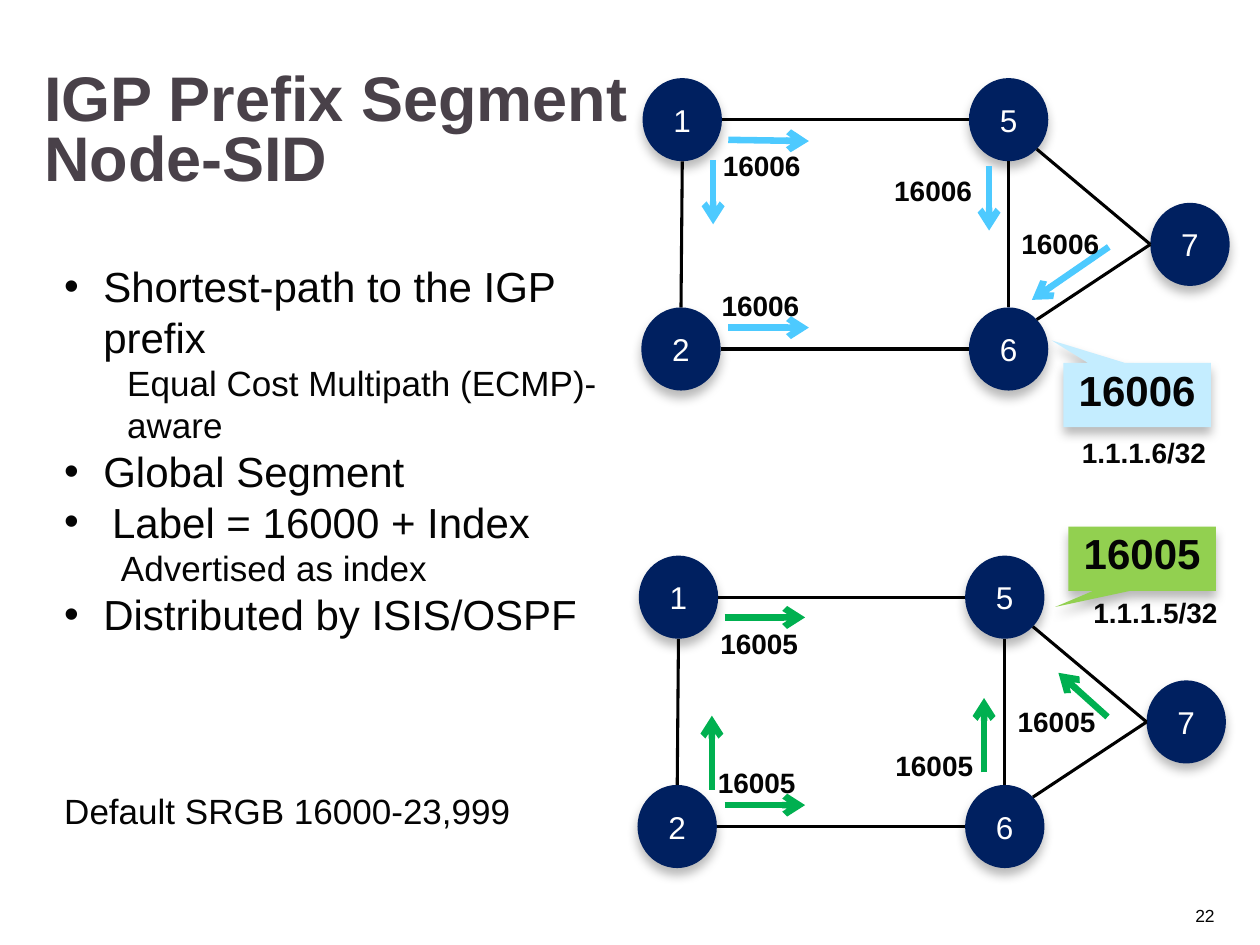
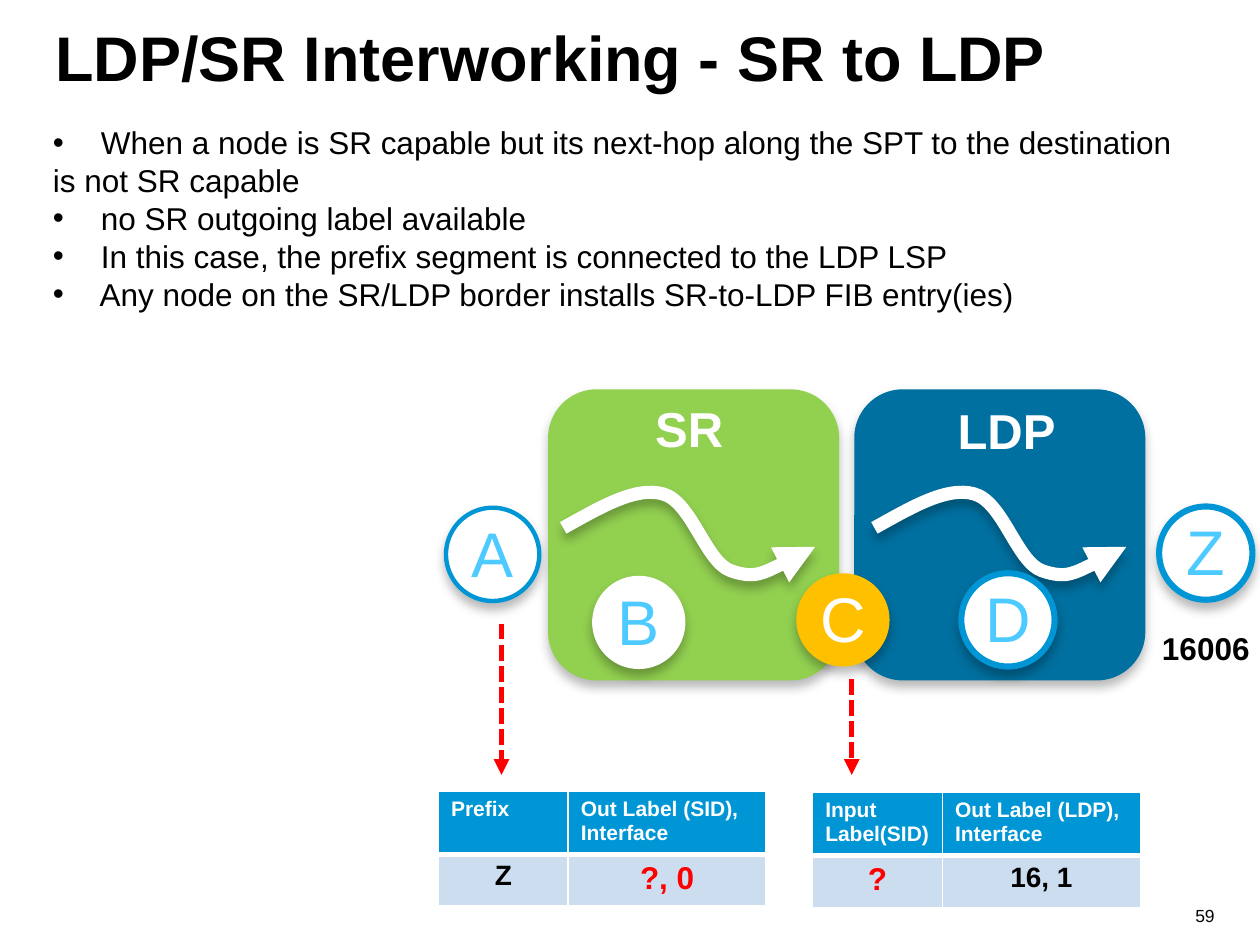
from math import cos, radians, sin

from lxml import etree
from pptx import Presentation
from pptx.dml.color import RGBColor
from pptx.enum.dml import MSO_LINE
from pptx.enum.shapes import MSO_CONNECTOR, MSO_SHAPE
from pptx.enum.text import MSO_ANCHOR, MSO_AUTO_SIZE, PP_ALIGN
from pptx.oxml.ns import qn
from pptx.util import Pt

PX = 9144
FONT = "Arial"
LEFT, CENTER, RIGHT = PP_ALIGN.LEFT, PP_ALIGN.CENTER, PP_ALIGN.RIGHT
TOP, MIDDLE, BOTTOM = MSO_ANCHOR.TOP, MSO_ANCHOR.MIDDLE, MSO_ANCHOR.BOTTOM
OVAL, ROUNDED, CALLOUT = MSO_SHAPE.OVAL, MSO_SHAPE.ROUNDED_RECTANGLE, MSO_SHAPE.RECTANGULAR_CALLOUT
STRAIGHT, DASHED = MSO_CONNECTOR.STRAIGHT, MSO_LINE.SQUARE_DOT

BLACK, INK, WHITE, RED = "000000", "040404", "FFFFFF", "FF0000"
NAVY, SKY, BLUE, OCEAN = "002060", "4DCAFF", "0096D6", "0070A0"
LIME, GREEN, AMBER, PALE_SKY, PALE_BLUE = "92D050", "00B050", "FFC000", "C4EDFF", "CCDDF0"

SEGMENT_SLIDE = {
    "title": ["IGP Prefix Segment", "Node-SID"],
    "title_box": (25, 67, 939, 92), "title_color": "494149", "title_anchor": BOTTOM,
    "body_box": (41, 202, 500, 475), "body_color": INK, "number": "22",
    "body": [
        ("Shortest-path to the IGP prefix", 24, 31, True, 0),
        ("Equal Cost Multipath (ECMP)-", 20, 50, False, 0),
        ("aware", 20, 50, False, 0),
        ("Global Segment", 24, 31, True, 0),
        ("Label = 16000 + Index", 24, 38, True, 0),
        ("Advertised as index", 20, 45, False, 0),
        ("Distributed by ISIS/OSPF", 24, 31, True, 0),
        ("Default SRGB 16000-23,999", 20, 0, False, 86),
    ],
}
INTERWORKING_SLIDE = {
    "title": ["LDP/SR Interworking - SR to LDP"],
    "title_box": (34, 21, 939, 92), "title_color": BLACK, "title_anchor": TOP,
    "body_box": (32, 93, 960, 252), "body_color": BLACK, "number": "59",
    "body": [
        ("When a node is SR capable but its next-hop along the SPT to the destination", 18, 38, True, 0),
        ("is not SR capable", 18, 0, False, 0),
        ("no SR outgoing label available", 18, 38, True, 0),
        ("In this case, the prefix segment is connected to the LDP LSP", 18, 38, True, 0),
        ("Any node on the SR/LDP border installs SR-to-LDP FIB entry(ies)", 18, 37, True, 0),
    ],
}

NODE_SIZE = (63, 66)
NODES = {"1": (1, 0), "2": (0, 182), "5": (260, 0), "6": (260, 182), "7": (404, 99)}
SITE_TOP, SITE_LEFT, SITE_BOTTOM, SITE_LOWER_RIGHT, SITE_RIGHT, SITE_UPPER_RIGHT = 0, 2, 4, 5, 6, 7
LINKS = [
    ("1", SITE_RIGHT, "5", SITE_LEFT), ("2", SITE_RIGHT, "6", SITE_LEFT),
    ("1", SITE_BOTTOM, "2", SITE_TOP), ("5", SITE_BOTTOM, "6", SITE_TOP),
    ("5", SITE_LOWER_RIGHT, "7", SITE_LEFT), ("6", SITE_UPPER_RIGHT, "7", SITE_LEFT),
]
TOPOLOGIES = [
    {
        "origin": (509, 62), "label": "16006", "arrow_color": SKY,
        "arrows": [(69, 49, 133, 50), (57, 65, 57, 116), (69, 198, 133, 198),
                   (276, 70, 276, 121), (371, 134, 310, 176)],
        "labels": [(55, 51), (54, 162), (191, 71), (292, 113)],
        "callout": (335, 226), "callout_color": PALE_SKY, "pointer": (-0.58, -0.85),
        "prefix": "1.1.1.6/32", "prefix_at": (339, 279),
    },
    {
        "origin": (506, 441), "label": "16005", "arrow_color": GREEN,
        "arrows": [(69, 49, 133, 49), (59, 186, 59, 127), (69, 198, 133, 198),
                   (275, 172, 275, 113), (373, 128, 334, 93)],
        "labels": [(56, 51), (54, 162), (195, 148), (292, 113)],
        "callout": (342, -23), "callout_color": LIME, "pointer": (-0.59, 0.75),
        "prefix": "1.1.1.5/32", "prefix_at": (351, 27),
    },
]

DOMAINS = [
    ("LDP", (678, 309), OCEAN, (760, 313, 99, 57), (694, 419)),
    ("SR", (435, 309), LIME, (520, 311, 75, 57), (447, 419)),
]
PATH_POINTS = [(29, -16), (57, -33), (79, -27), (102, -21), (113, 27), (133, 34),
               (153, 41), (177, 28), (200, 15)]
ROUTERS = [
    ("C", (632, 455), AMBER, WHITE, None), ("B", (470, 457), WHITE, SKY, None),
    ("D", (763, 455), WHITE, SKY, 3.5), ("A", (354, 403), WHITE, SKY, 2.5),
    ("Z", (920, 402), WHITE, SKY, 3.5),
]
LOOKUPS = [(398, 495, 398, 615), (676, 539, 676, 615)]
COLUMN_WIDTHS, ROW_HEIGHTS = (103, 157), (50, 41)
TABLES = [
    ((348, 628), ["Prefix", "Out Label (SID), Interface"], [("Z", 16, BLACK), ("?, 0", 18, RED)]),
    ((645, 629), ["Input Label(SID)", "Out Label (LDP), Interface"], [("?", 18, RED), ("16, 1", 16, BLACK)]),
]


def emu(*lengths):
    return [round(length * PX) for length in lengths]


def rgb(value):
    return RGBColor.from_string(value)


def apply(target, values):
    for name, value in values.items():
        setattr(target, name, value)


def write(frame, lines, size, color, bold=False, **paragraph_format):
    frame.text = "\n".join(lines)
    for paragraph in frame.paragraphs:
        apply(paragraph, paragraph_format)
        apply(paragraph.font, {"name": FONT, "size": Pt(size), "bold": bold})
        paragraph.font.color.rgb = rgb(color)


def add_label(slide, box, text, size, color, bold=True, align=CENTER, anchor=TOP):
    frame = slide.shapes.add_textbox(*emu(*box)).text_frame
    apply(frame, {"word_wrap": False, "vertical_anchor": anchor, "margin_left": 0, "margin_right": 0})
    write(frame, [text], size, color, bold, alignment=align)


def drop_shadow(shape):
    shape.shadow.inherit = False
    effects = shape._element.spPr.find(qn("a:effectLst"))
    shadow = etree.SubElement(effects, qn("a:outerShdw"), blurRad=str(Pt(6)), dist=str(Pt(4)),
                              dir="5400000", algn="ctr", rotWithShape="0")
    tint = etree.SubElement(shadow, qn("a:srgbClr"), val=BLACK)
    etree.SubElement(tint, qn("a:alpha"), val="27000")


def add_figure(slide, kind, box, fill, outline=None):
    shape = slide.shapes.add_shape(kind, *emu(*box))
    shape.fill.solid()
    shape.fill.fore_color.rgb = rgb(fill)
    if outline:
        style_line(shape.line, BLUE, outline)
    else:
        shape.line.fill.background()
    drop_shadow(shape)
    margins = ("margin_left", "margin_top", "margin_right", "margin_bottom")
    apply(shape.text_frame, {"word_wrap": False, "vertical_anchor": MIDDLE} | dict.fromkeys(margins, 0))
    return shape


def style_line(line, color, width, head=None, dash=None):
    line.color.rgb = rgb(color)
    line.width = Pt(width)
    if dash:
        line.dash_style = dash
    if head:
        etree.SubElement(line._get_or_add_ln(), qn("a:tailEnd"), type=head)


def add_line(slide, ends, color, width, head=None, dash=None):
    connector = slide.shapes.add_connector(STRAIGHT, *emu(*ends))
    style_line(connector.line, color, width, head, dash)
    etree.SubElement(connector._element.spPr, qn("a:effectLst"))
    return connector


def add_base_slide(presentation, content):
    slide = presentation.slides.add_slide(presentation.slide_layouts[1])
    title, body = slide.shapes.title, slide.placeholders[1]
    for placeholder, box in ((title, content["title_box"]), (body, content["body_box"])):
        apply(placeholder, dict(zip(("left", "top", "width", "height"), emu(*box))))
        apply(placeholder.text_frame, {"auto_size": MSO_AUTO_SIZE.NONE, "word_wrap": True})
    title.text_frame.vertical_anchor = content["title_anchor"]
    write(title.text_frame, content["title"], 36, content["title_color"], True,
          alignment=LEFT, line_spacing=0.8)
    write(body.text_frame, [item[0] for item in content["body"]], 18, content["body_color"])
    for paragraph, (_, size, margin, bulleted, gap) in zip(body.text_frame.paragraphs, content["body"]):
        paragraph.font.size = Pt(size)
        apply(paragraph, {"space_before": Pt(gap), "space_after": Pt(0)})
        properties = paragraph._p.get_or_add_pPr()
        properties.set("marL", str(margin * PX))
        properties.set("indent", str(-margin * PX if bulleted else 0))
        if not bulleted:
            etree.SubElement(properties, qn("a:buNone"))
    add_label(slide, (929, 714, 35, 26), content["number"], 10, INK, False, RIGHT, BOTTOM)
    return slide


def oval_site(corner, site):
    angle = radians(90 + 45 * site)
    half_width, half_height = (length / 2 for length in NODE_SIZE)
    return (corner[0] + half_width * (1 + cos(angle)), corner[1] + half_height * (1 - sin(angle)))


def add_topology(slide, topology):
    left, top = topology["origin"]
    corners = {name: (left + x, top + y) for name, (x, y) in NODES.items()}
    nodes = {}
    for name, corner in corners.items():
        nodes[name] = add_figure(slide, OVAL, (*corner, *NODE_SIZE), NAVY)
        write(nodes[name].text_frame, [name], 18, WHITE, alignment=CENTER)
    for start, start_site, end, end_site in LINKS:
        ends = (*oval_site(corners[start], start_site), *oval_site(corners[end], end_site))
        connector = add_line(slide, ends, BLACK, 1.75)
        joints = connector._element.nvCxnSpPr.cNvCxnSpPr
        for tag, name, site in (("a:stCxn", start, start_site), ("a:endCxn", end, end_site)):
            etree.SubElement(joints, qn(tag), id=str(nodes[name].shape_id), idx=str(site))
    for x1, y1, x2, y2 in topology["arrows"]:
        add_line(slide, (left + x1, top + y1, left + x2, top + y2), topology["arrow_color"], 3.75, "arrow")
    for x, y in topology["labels"]:
        add_label(slide, (left + x, top + y, 81, 36), topology["label"], 16, INK)
    x, y = topology["callout"]
    callout = add_figure(slide, CALLOUT, (left + x, top + y, 117, 51), topology["callout_color"])
    callout.adjustments[0], callout.adjustments[1] = topology["pointer"]
    apply(callout.text_frame, {"vertical_anchor": TOP, "margin_top": PX})
    write(callout.text_frame, [topology["label"]], 24, INK, True, alignment=CENTER)
    x, y = topology["prefix_at"]
    add_label(slide, (left + x, top + y, 120, 28), topology["prefix"], 16, INK)


def add_curved_path(slide, start):
    builder = slide.shapes.build_freeform(*start, scale=PX)
    builder.add_line_segments([(start[0] + x, start[1] + y) for x, y in PATH_POINTS], close=False)
    curve = builder.convert_to_shape()
    segments = list(curve._element.iter(qn("a:lnTo")))
    outline = segments[0].getparent()
    for first in range(0, len(segments), 3):
        bezier = etree.SubElement(outline, qn("a:cubicBezTo"))
        for segment in segments[first:first + 3]:
            bezier.append(segment[0])
            outline.remove(segment)
    curve.fill.background()
    style_line(curve.line, WHITE, 7.5, "triangle")
    drop_shadow(curve)


def underline_cell(cell):
    properties = cell._tc.get_or_add_tcPr()
    border = etree.Element(qn("a:lnB"), w=str(Pt(3)))
    fill = etree.SubElement(border, qn("a:solidFill"))
    etree.SubElement(fill, qn("a:srgbClr"), val=WHITE)
    properties.insert(0, border)


def add_label_table(slide, corner, headings, values):
    box = (*corner, sum(COLUMN_WIDTHS), sum(ROW_HEIGHTS))
    table = slide.shapes.add_table(2, 2, *emu(*box)).table
    for column, width in zip(table.columns, emu(*COLUMN_WIDTHS)):
        column.width = width
    for row, height in zip(table.rows, emu(*ROW_HEIGHTS)):
        row.height = height
    rows = [([(text, 12, WHITE) for text in headings], BLUE, LEFT), (values, PALE_BLUE, CENTER)]
    for row_index, (cells, fill, align) in enumerate(rows):
        for column_index, (text, size, color) in enumerate(cells):
            cell = table.cell(row_index, column_index)
            cell.fill.solid()
            cell.fill.fore_color.rgb = rgb(fill)
            write(cell.text_frame, [text], size, color, True, alignment=align)
    for column_index in range(len(COLUMN_WIDTHS)):
        underline_cell(table.cell(0, column_index))


def add_interworking(slide):
    for _, corner, color, _, _ in DOMAINS:
        add_figure(slide, ROUNDED, (*corner, 231, 231), color)
    for name, _, _, name_box, path_start in DOMAINS:
        add_curved_path(slide, path_start)
        add_label(slide, name_box, name, 28, WHITE, align=LEFT)
    for name, corner, fill, color, outline in ROUTERS:
        router = add_figure(slide, OVAL, (*corner, 74, 74), fill, outline)
        router.text_frame.margin_bottom = 4 * PX
        write(router.text_frame, [name], 36, color, alignment=CENTER)
    for ends in LOOKUPS:
        add_line(slide, ends, RED, 3, "triangle", DASHED)
    for table in TABLES:
        add_label_table(slide, *table)
    add_label(slide, (907, 494, 100, 100), "16006", 18, BLACK)


def main():
    presentation = Presentation()
    presentation.slide_width, presentation.slide_height = emu(1000, 750)
    segment_slide = add_base_slide(presentation, SEGMENT_SLIDE)
    for topology in TOPOLOGIES:
        add_topology(segment_slide, topology)
    add_interworking(add_base_slide(presentation, INTERWORKING_SLIDE))
    presentation.save("out.pptx")


if __name__ == "__main__":
    main()
